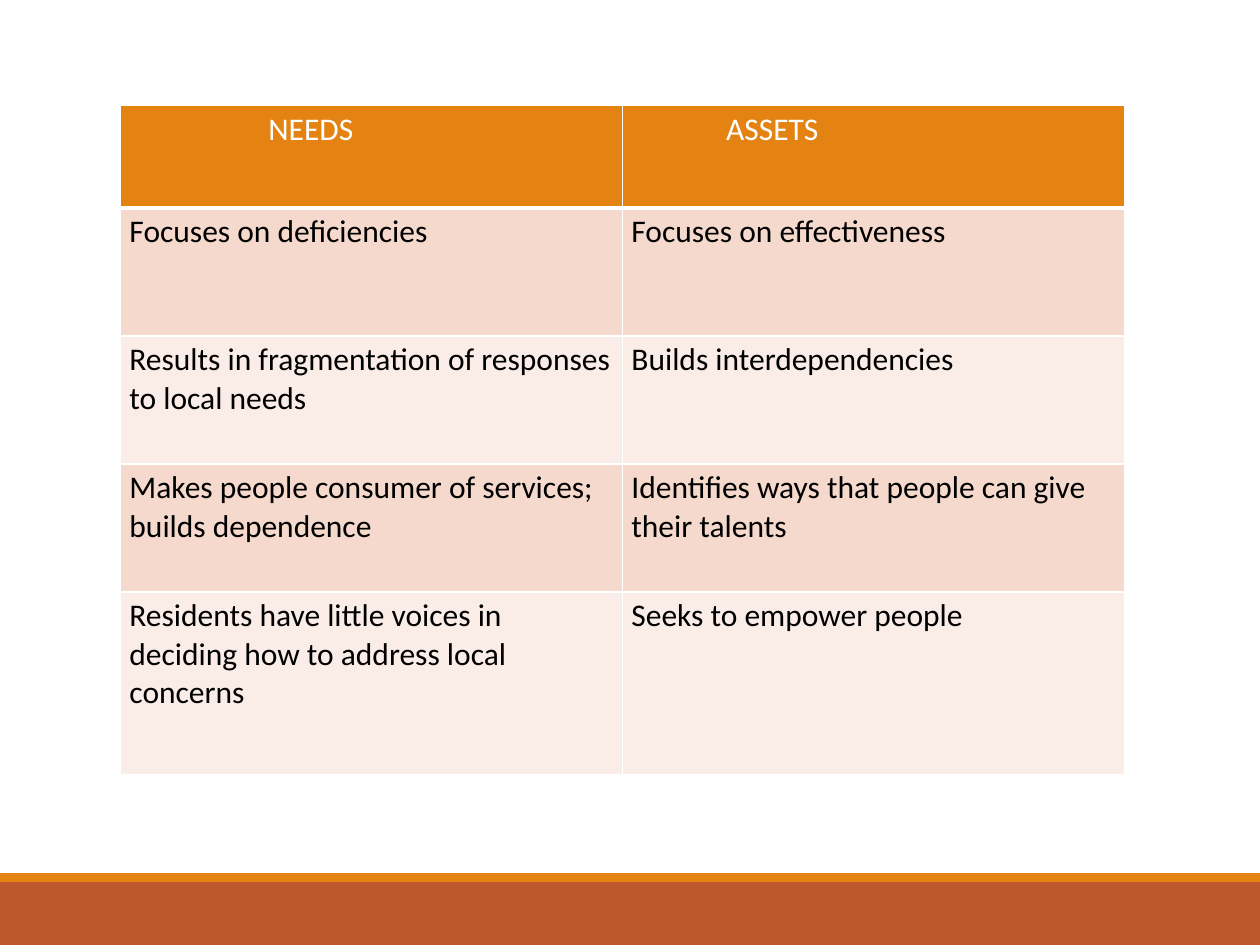
"""Build a slide with a table that compares needs and assets."""
from lxml import etree
from pptx import Presentation
from pptx.dml.color import RGBColor
from pptx.enum.shapes import MSO_SHAPE
from pptx.oxml.ns import qn
from pptx.util import Cm, Pt

RECT = MSO_SHAPE.RECTANGLE
THEME = {
    "font": "Calibri", "size": Pt(18),
    "white": "FFFFFF", "black": "000000",
    "rust": "BD582C", "orange": "E48312",
    "bands": ("FAEDE7", "F5D9CC"),
}
ROWS = [
    ("NEEDS", "ASSETS"),
    ("Focuses on deficiencies", "Focuses on effectiveness"),
    ("Results in fragmentation of responses to local needs",
     "Builds interdependencies"),
    ("Makes people consumer of services; builds dependence",
     "Identifies ways that people can give their talents"),
    ("Residents have little voices in deciding how to address local concerns",
     "Seeks to empower people"),
]
HEIGHTS = (2.07, 2.58, 2.58, 2.58, 3.69)
INDENTS = (2.98, 2.09)
WIDTH = 10.12


def paint(item, color):
    item.fill.solid()
    item.fill.fore_color.rgb = RGBColor.from_string(color)


def edge(cell, sides):
    props = cell._tc.get_or_add_tcPr()
    for spot, (side, width) in enumerate(sides.items()):
        line = etree.Element(qn(f"a:ln{side}"), w=str(Pt(width)))
        fill = etree.SubElement(line, qn("a:solidFill"))
        etree.SubElement(fill, qn("a:srgbClr"), val=THEME["white"])
        props.insert(spot, line)


deck = Presentation()
deck.slide_width, deck.slide_height = Cm(25.4), Cm(19.05)
slide = deck.slides.add_slide(deck.slide_layouts[6])

for top, height, color in ((17.78, 1.27, "rust"), (17.6, 0.18, "orange")):
    bar = slide.shapes.add_shape(RECT, 0, Cm(top), deck.slide_width, Cm(height))
    bar.shadow.inherit = False
    bar.line.fill.background()
    paint(bar, THEME[color])

table = slide.shapes.add_table(
    len(ROWS), len(INDENTS), Cm(2.43), Cm(2.12),
    Cm(WIDTH * len(INDENTS)), Cm(sum(HEIGHTS))).table
for col in table.columns:
    col.width = Cm(WIDTH)

for r, (texts, height) in enumerate(zip(ROWS, HEIGHTS)):
    table.rows[r].height = Cm(height)
    head = r == 0
    for c, text in enumerate(texts):
        cell = table.cell(r, c)
        cell.text = text
        paint(cell, THEME["orange"] if head else THEME["bands"][r % 2])
        edge(cell, {"L": 1, "R": 1, "T": 1, "B": 3 if head else 1})
        pads = {"margin_left": Cm(INDENTS[c] if head else 0.18),
                "margin_right": Cm(0.18),
                "margin_top": Cm(0.1), "margin_bottom": Cm(0.1)}
        for name, value in pads.items():
            setattr(cell, name, value)
        font = cell.text_frame.paragraphs[0].runs[0].font
        style = {"name": THEME["font"], "size": THEME["size"], "bold": False}
        for name, value in style.items():
            setattr(font, name, value)
        ink = THEME["white" if head else "black"]
        font.color.rgb = RGBColor.from_string(ink)

deck.save("out.pptx")
